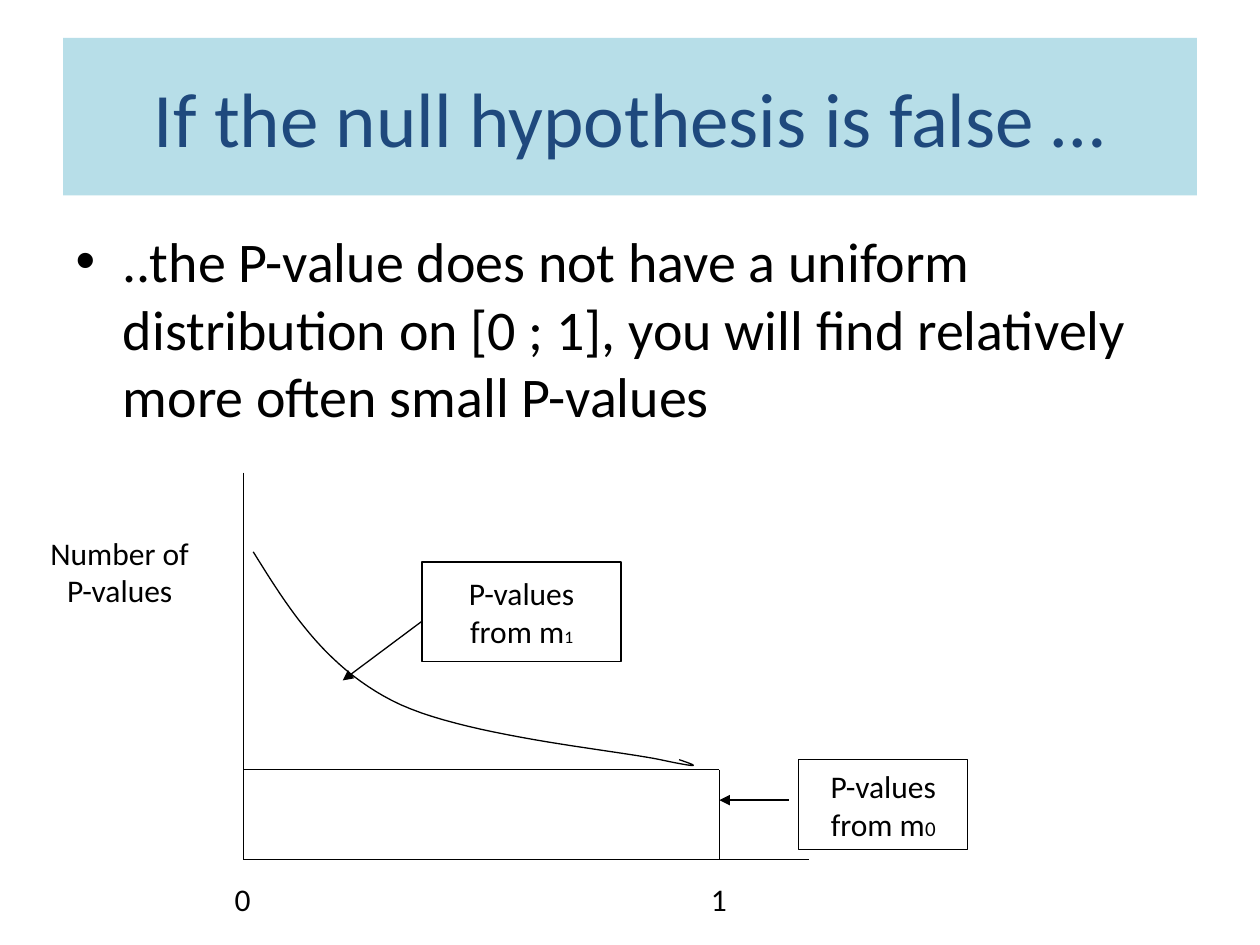
from dataclasses import dataclass

from lxml import etree
from pptx import Presentation
from pptx.dml.color import RGBColor
from pptx.enum import shapes, text
from pptx.oxml import ns
from pptx.util import Inches, Pt


@dataclass(frozen=True)
class Theme:
    """Colours, font and sizes of the slide."""
    font: str = "Calibri"
    band: str = "B7DEE8"
    head: str = "1F497D"
    ink: str = "000000"
    paper: str = "FFFFFF"
    title: int = 44
    body: int = 32
    label: int = 18
    line: float = 0.75


THEME = Theme()
STEPS = 24


def paint(fill, tint):
    """Fill an area with one solid colour."""
    fill.solid()
    fill.fore_color.rgb = RGBColor.from_string(tint)


def stroke(line, tint=THEME.ink):
    """Set the colour and width of a line."""
    paint(line.fill, tint)
    line.width = Pt(THEME.line)


def style(font, size, tint=THEME.ink):
    """Set the face, size and colour of a font."""
    for key, value in {"name": THEME.font, "size": Pt(size)}.items():
        setattr(font, key, value)
    font.color.rgb = RGBColor.from_string(tint)


def place(shape, box):
    """Move a shape to a box given in inches."""
    for key, value in zip(("left", "top", "width", "height"), box):
        setattr(shape, key, Inches(value))


def add_title(slide, box, words):
    """Fill the title placeholder and give it a coloured band."""
    shape = slide.shapes.title
    place(shape, box)
    paint(shape.fill, THEME.band)
    frame = shape.text_frame
    frame.text = words
    frame.vertical_anchor = text.MSO_ANCHOR.MIDDLE
    frame.paragraphs[0].alignment = text.PP_ALIGN.CENTER
    style(frame.paragraphs[0].runs[0].font, THEME.title, THEME.head)


def add_body(slide, box, words):
    """Fill the body placeholder with one bullet."""
    shape = slide.placeholders[1]
    place(shape, box)
    shape.text_frame.text = words
    style(shape.text_frame.paragraphs[0].runs[0].font, THEME.body)


def add_label(slide, box, rows, edge=THEME.paper):
    """Add a centred label whose rows are lists of (words, size) runs."""
    kind = shapes.MSO_SHAPE.RECTANGLE
    shape = slide.shapes.add_shape(kind, *map(Inches, box))
    shape.shadow.inherit = False
    paint(shape.fill, THEME.paper)
    stroke(shape.line, edge)
    frame = shape.text_frame
    frame.word_wrap = False
    frame.vertical_anchor = text.MSO_ANCHOR.MIDDLE
    for i, row in enumerate(rows):
        para = frame.add_paragraph() if i else frame.paragraphs[0]
        para.alignment = text.PP_ALIGN.CENTER
        for words, size in row:
            run = para.add_run()
            run.text = words
            style(run.font, size)


def add_line(slide, start, end, arrow=False):
    """Draw a straight line, with an arrowhead at its end on request."""
    kind = shapes.MSO_CONNECTOR.STRAIGHT
    line = slide.shapes.add_connector(kind, *map(Inches, (*start, *end)))
    stroke(line.line)
    props = line._element.spPr
    if arrow:
        tail = etree.SubElement(line.line._get_or_add_ln(), ns.qn("a:tailEnd"))
        tail.set("type", "triangle")
    etree.SubElement(props, ns.qn("a:effectLst"))


def bezier(knots, t):
    """Return the point at t on a cubic curve."""
    parts = ((1 - t) ** 3, 3 * t * (1 - t) ** 2, 3 * t * t * (1 - t), t ** 3)
    return tuple(sum(w * k[i] for w, k in zip(parts, knots)) for i in (0, 1))


def add_curve(slide, knots):
    """Draw joined cubic curves through every third knot."""
    spots = [bezier(knots[i:i + 4], n / STEPS)
             for i in range(0, len(knots) - 1, 3)
             for n in range(1, STEPS + 1)]
    pen = slide.shapes.build_freeform(*map(Inches, knots[0]))
    pen.add_line_segments([tuple(map(Inches, s)) for s in spots], close=False)
    shape = pen.convert_to_shape()
    shape.shadow.inherit = False
    shape.fill.background()
    stroke(shape.line)


def add_plot(slide, box):
    """Draw the axes, the uniform block, the falling curve and the labels."""
    left, top, width, height = box
    base, one = top + height, left + 3.78
    level = base - 0.71

    def at(x, y):
        return left + x, top + y

    add_line(slide, (left, top), (left, base))
    add_line(slide, (left, base), (left + width, base))
    add_line(slide, (left, level), (one, level))
    add_line(slide, (one, level), (one, base))
    knots = [(0.08, 0.63), (0.36, 1.08), (0.64, 1.53), (1.18, 1.81),
             (1.72, 2.09), (2.93, 2.2), (3.31, 2.28),
             (3.69, 2.36), (3.58, 2.32), (3.46, 2.28)]
    add_curve(slide, [at(*k) for k in knots])

    size = THEME.label
    for mark, x in (("0", left), ("1", one)):
        add_label(slide, (x - 0.16, base + 0.16, 0.31, 0.31), [[(mark, size)]])
    add_label(slide, (*at(-1.73, 0.39), 1.5, 0.79),
              [[("Number of", size)], [("P-values", size)]])
    for sub, small, area in (("0", 12, (*at(4.41, 2.28), 1.34, 0.71)),
                             ("1", 10, (*at(1.42, 0.71), 1.58, 0.79))):
        rows = [[("P-values", size)], [("from m", size), (sub, small)]]
        add_label(slide, area, rows, THEME.ink)
    add_line(slide, at(4.33, 2.6), at(3.78, 2.6), arrow=True)
    add_line(slide, at(1.42, 1.18), at(0.79, 1.65), arrow=True)


def main():
    """Build the slide and save it."""
    deck = Presentation()
    deck.slide_width, deck.slide_height = Inches(10), Inches(7.5)
    slide = deck.slides.add_slide(deck.slide_layouts[1])
    add_title(slide, (0.5, 0.3, 9, 1.25), "If the null hypothesis is false …")
    add_body(slide, (0.5, 1.75, 9, 4.95),
             "..the P-value does not have a uniform distribution on [0 ; 1], "
             "you will find relatively more often small P-values")
    add_plot(slide, (1.93, 3.75, 4.49, 3.07))
    for spot in list(slide.placeholders):
        if not spot.text_frame.text:
            spot._element.getparent().remove(spot._element)
    deck.save("out.pptx")


if __name__ == "__main__":
    main()
